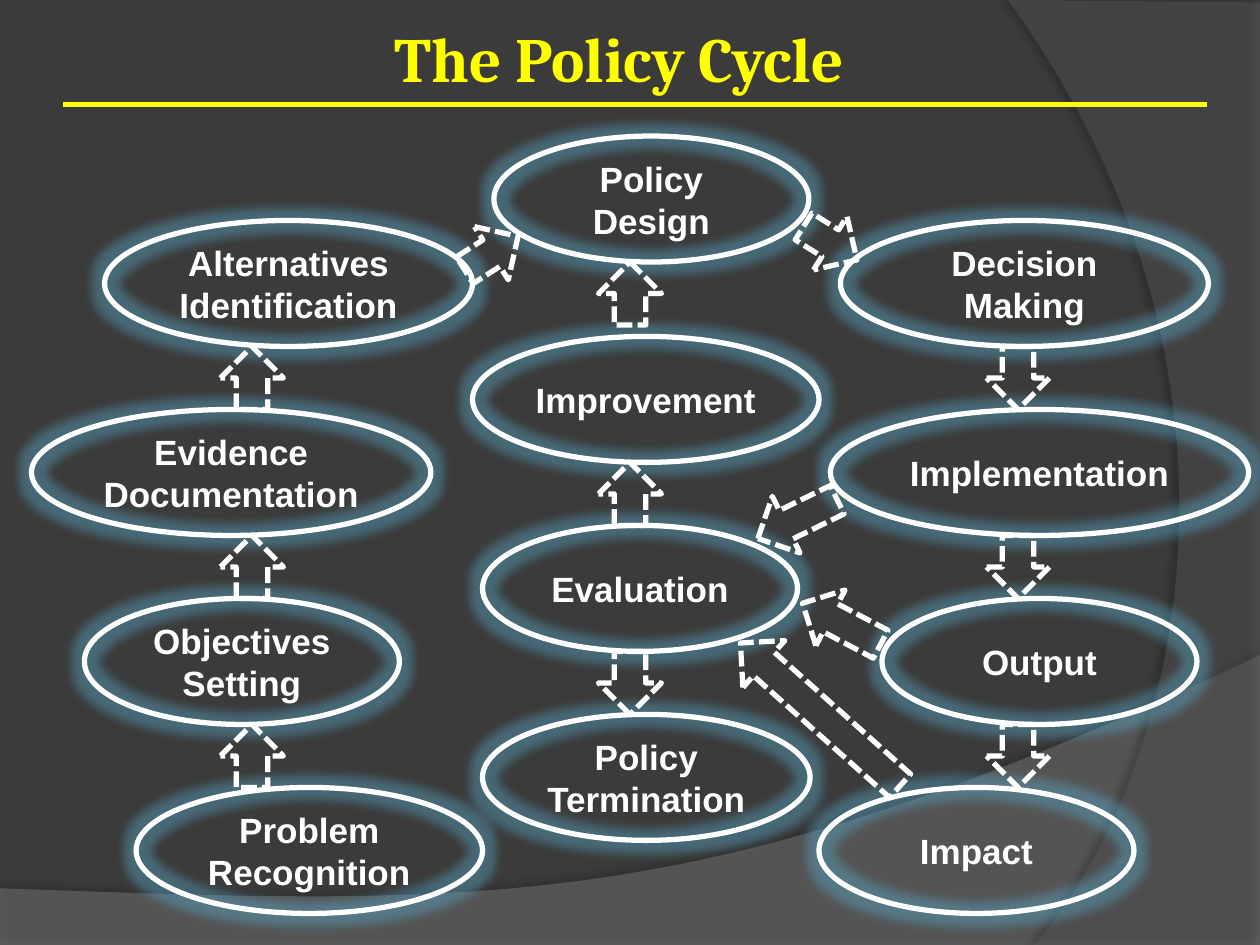
from dataclasses import dataclass

import pptx
import pptx.util
import pptx.dml.color
import pptx.enum.dml
import pptx.enum.shapes
import pptx.enum.text
import pptx.oxml
import pptx.oxml.ns

Inches = pptx.util.Inches
Pt = pptx.util.Pt
Shape = pptx.enum.shapes.MSO_SHAPE
UP, DOWN, LEFT = Shape.UP_ARROW, Shape.DOWN_ARROW, Shape.LEFT_ARROW


@dataclass(frozen=True)
class Theme:
    background: str = "3B3B3B"
    wave: str = "7F7F7F"
    side: str = "5E5E5E"
    shadow: str = "000000"
    accent: str = "FFFF00"
    outline: str = "FFFFFF"
    glow: str = "59AECF"
    title_font: str = "Cambria"
    body_font: str = "Arial"
    title_size: int = 36
    body_size: int = 20
    line_width: int = 3
    glow_radius: int = 11


def color(value):
    return pptx.dml.color.RGBColor.from_string(value)


def bezier(start, first, second, end, steps=48):
    """Points along a cubic curve, without its start."""
    points = []
    for step in range(1, steps + 1):
        t = step / steps
        weights = ((1 - t) ** 3, 3 * t * (1 - t) ** 2, 3 * t * t * (1 - t), t ** 3)
        corners = (start, first, second, end)
        points.append(tuple(sum(w * c[axis] for w, c in zip(weights, corners))
                            for axis in (0, 1)))
    return points


def set_alpha(parent, percent):
    alpha = pptx.oxml.parse_xml(
        f'<a:alpha {pptx.oxml.ns.nsdecls("a")} val="{percent * 1000}"/>')
    parent.find(".//" + pptx.oxml.ns.qn("a:srgbClr")).append(alpha)


class PolicySlide:
    def __init__(self, deck, theme):
        self.theme = theme
        self.page = deck.slides.add_slide(deck.slide_layouts[6])
        fill = self.page.background.fill
        fill.solid()
        fill.fore_color.rgb = color(theme.background)

    def effect(self, shape, tag, value, percent, **settings):
        """Give a shape one glow or shadow."""
        shape.shadow.inherit = False
        attributes = " ".join(f'{key}="{number}"' for key, number in settings.items())
        node = pptx.oxml.parse_xml(
            f'<a:{tag} {pptx.oxml.ns.nsdecls("a")} {attributes}>'
            f'<a:srgbClr val="{value}"/></a:{tag}>')
        set_alpha(node, percent)
        shape.element.spPr.find(pptx.oxml.ns.qn("a:effectLst")).append(node)

    def outline(self, shape, value):
        shape.line.color.rgb = color(value)
        shape.line.width = Pt(self.theme.line_width)

    def label(self, shape, text, font, size, value):
        frame = shape.text_frame
        frame.word_wrap = True
        frame.vertical_anchor = pptx.enum.text.MSO_ANCHOR.MIDDLE
        para = frame.paragraphs[0]
        para.text = text
        para.alignment = pptx.enum.text.PP_ALIGN.CENTER
        para.font.name = font
        para.font.size = Pt(size)
        para.font.bold = True
        para.font.color.rgb = color(value)
        return frame

    def backdrop(self, points, value, opacity, shadow_opacity, distance, angle):
        corners = [(Inches(x), Inches(y)) for x, y in points]
        builder = self.page.shapes.build_freeform(*corners[0])
        builder.add_line_segments(corners[1:], close=True)
        shape = builder.convert_to_shape()
        shape.fill.solid()
        shape.fill.fore_color.rgb = color(value)
        set_alpha(shape.element.spPr, opacity)
        shape.line.fill.background()
        self.effect(shape, "outerShdw", self.theme.shadow, shadow_opacity,
                    blurRad=Pt(4), dist=Pt(distance), dir=angle * 60000,
                    algn="ctr", rotWithShape=0)

    def title(self, text, left, top, width, height):
        box = self.page.shapes.add_textbox(*map(Inches, (left, top, width, height)))
        frame = self.label(box, text, self.theme.title_font,
                           self.theme.title_size, self.theme.accent)
        frame.margin_left = frame.margin_right = Inches(0.05)
        frame.margin_top = frame.margin_bottom = Inches(0.05)

    def rule(self, left, right, top):
        line = self.page.shapes.add_connector(
            pptx.enum.shapes.MSO_CONNECTOR.STRAIGHT,
            Inches(left), Inches(top), Inches(right), Inches(top))
        self.outline(line, self.theme.accent)
        line.element.spPr.append(pptx.oxml.parse_xml(
            f'<a:effectLst {pptx.oxml.ns.nsdecls("a")}/>'))

    def stage(self, text, left, top, width):
        oval = self.page.shapes.add_shape(
            Shape.OVAL, Inches(left), Inches(top), Inches(width), Inches(1))
        oval.fill.background()
        self.outline(oval, self.theme.outline)
        self.effect(oval, "glow", self.theme.glow, 40, rad=Pt(self.theme.glow_radius))
        self.label(oval, text, self.theme.body_font,
                   self.theme.body_size, self.theme.outline)

    def arrow(self, kind, left, top, width=0.5, height=0.5, rotation=0):
        arrow = self.page.shapes.add_shape(
            kind, *map(Inches, (left, top, width, height)))
        arrow.rotation = rotation
        arrow.fill.background()
        self.outline(arrow, self.theme.outline)
        arrow.line.dash_style = pptx.enum.dml.MSO_LINE.SQUARE_DOT
        arrow.shadow.inherit = False


def main():
    deck = pptx.Presentation()
    deck.slide_width, deck.slide_height = Inches(10), Inches(7.5)
    slide = PolicySlide(deck, Theme())
    theme = slide.theme

    # Curved backdrop
    wave = [(0, 7.05), (0, 7.5), (10, 7.5), (10, 5.2)]
    wave += bezier((10, 5.2), (5.59, 7.29), (3.91, 7.19), (0, 7.05))
    slide.backdrop(wave, theme.wave, 45, 35, 3.5, 270)
    side = [(10, 0.02), (10, 7.5), (8.21, 7.5)]
    side += bezier((8.21, 7.5), (9.35, 6.19), (10.18, 3), (8, 0))
    slide.backdrop(side, theme.side, 40, 45, 4, 180)

    # Title
    slide.title("The Policy Cycle", 0.83, -0.17, 8.17, 1.25)

    # Stages of the cycle: text, left, top, width
    for stage in (
        ("Evidence Documentation", 0.25, 3.25, 3.17),
        ("Alternatives Identification", 0.83, 1.75, 2.92),
        ("Policy Design", 3.92, 1.08, 2.5),
        ("Decision Making", 6.67, 1.75, 2.92),
        ("Implementation", 6.59, 3.25, 3.32),
        ("Output", 7, 4.75, 2.5),
        ("Impact", 6.5, 6.25, 2.5),
        ("Policy Termination", 3.83, 5.67, 2.6),
        ("Evaluation", 3.83, 4.17, 2.5),
        ("Improvement", 3.75, 2.67, 2.75),
        ("Problem Recognition", 1.08, 6.25, 2.75),
        ("Objectives Setting", 0.67, 4.75, 2.5),
    ):
        slide.stage(*stage)

    # Arrows up the left column and down the right one
    for top in (5.75, 4.25, 2.75):
        slide.arrow(UP, 1.75, top)
        slide.arrow(DOWN, 7.83, top)

    # Arrows of the middle column
    slide.arrow(LEFT, 4.75, 2.08, rotation=90)
    slide.arrow(UP, 4.75, 3.67)
    slide.arrow(LEFT, 4.75, 5.17, rotation=270)

    # Slanted arrows between the columns
    slide.arrow(UP, 3.65, 1.76, rotation=57.5)
    slide.arrow(DOWN, 6.34, 1.68, rotation=302.1)
    slide.arrow(LEFT, 5.98, 3.87, width=0.7, rotation=334)
    slide.arrow(UP, 6.43, 4.6, height=0.7, rotation=297.7)
    slide.arrow(UP, 6.26, 4.82, height=1.7, rotation=311.8)

    # Rule below the title
    slide.rule(0.5, 9.58, 0.83)

    deck.save("out.pptx")


if __name__ == "__main__":
    main()
